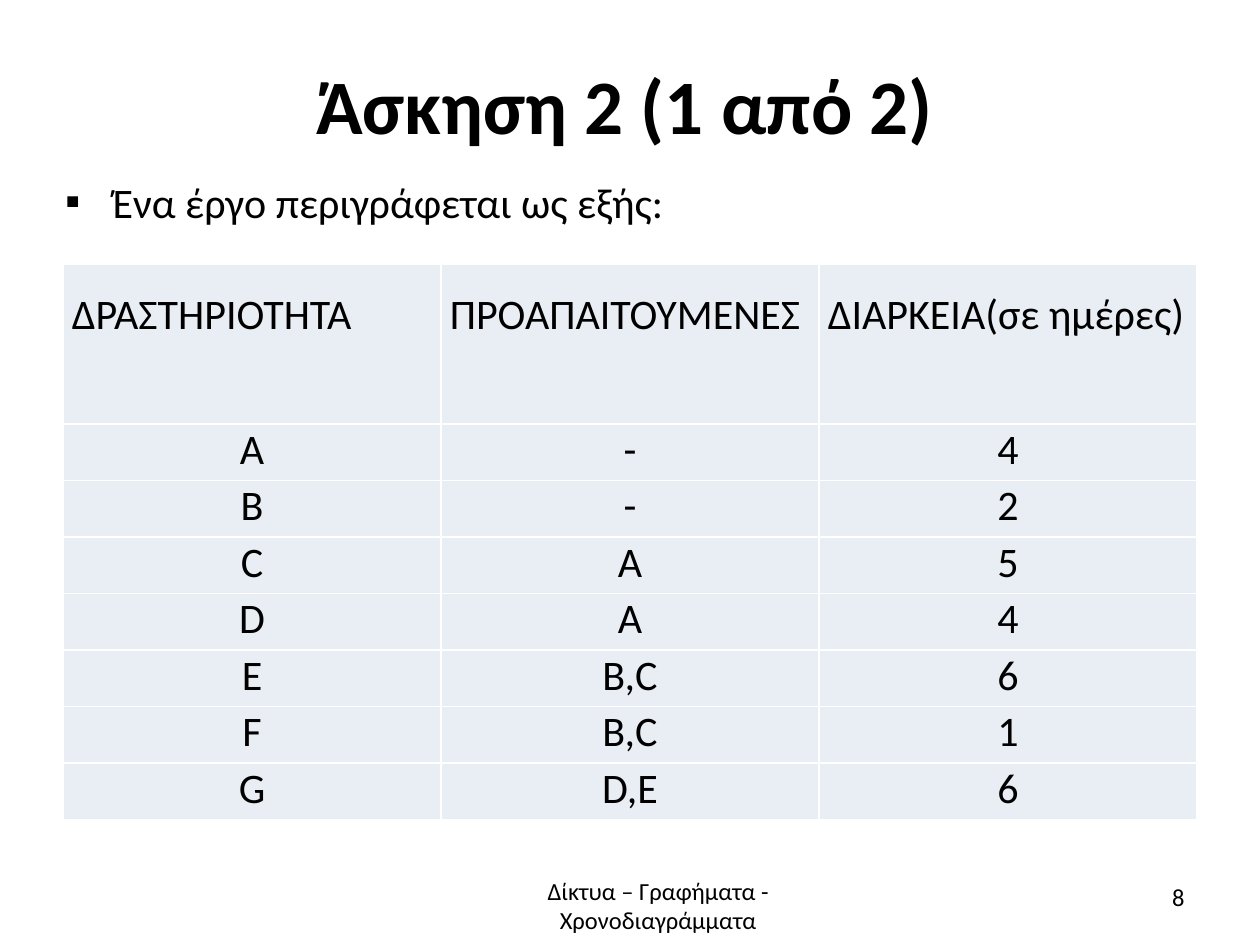
"""Builds the exercise slide with its table of project activities."""
import lxml.etree
import pptx
import pptx.dml.color
import pptx.enum.text
import pptx.oxml.ns
import pptx.util

Cm = pptx.util.Cm
Pt = pptx.util.Pt
ALIGN = pptx.enum.text.PP_ALIGN
COLORS = {"text": "000000", "cell": "E9EDF4", "border": "FFFFFF"}


def add_run(paragraph, text, size, align, bold=False):
    paragraph.alignment = align
    run = paragraph.add_run()
    run.text = text
    run.font.name = "Calibri"
    run.font.size = Pt(size)
    run.font.bold = bold
    run.font.color.rgb = pptx.dml.color.RGBColor.from_string(COLORS["text"])


def add_element(parent, tag, **attributes):
    return lxml.etree.SubElement(parent, pptx.oxml.ns.qn(tag), **attributes)


deck = pptx.Presentation()
deck.slide_width, deck.slide_height = Cm(25.4), Cm(19.05)
slide = deck.slides.add_slide(deck.slide_layouts[6])

title = slide.shapes.add_textbox(Cm(1.07), Cm(0.41), Cm(23.06), Cm(3.33)).text_frame
title.word_wrap = True
title.vertical_anchor = pptx.enum.text.MSO_ANCHOR.MIDDLE
title.margin_left = title.margin_right = title.margin_bottom = 0
title.margin_top = Cm(0.05)
add_run(title.paragraphs[0], "Άσκηση 2 (1 από 2)", 44, ALIGN.CENTER, bold=True)

intro = slide.shapes.add_textbox(Cm(1.07), Cm(2.92), Cm(23.06), Cm(1.63)).text_frame
intro.word_wrap = True
intro_line = intro.paragraphs[0]
intro_line.line_spacing = 1.5
intro_format = intro_line._p.get_or_add_pPr()
intro_format.set("marL", str(Cm(0.95)))
intro_format.set("indent", str(-Cm(0.95)))
add_element(intro_format, "a:buFont", typeface="Calibri")
add_element(intro_format, "a:buChar", char="▪")
add_run(intro_line, "Ένα έργο περιγράφεται ως εξής:", 24, ALIGN.LEFT)

activities = [
    ("ΔΡΑΣΤΗΡΙΟΤΗΤΑ", "ΠΡΟΑΠΑΙΤΟΥΜΕΝΕΣ", "ΔΙΑΡΚΕΙΑ(σε ημέρες)"),
    ("A", "-", "4"),
    ("B", "-", "2"),
    ("C", "A", "5"),
    ("D", "A", "4"),
    ("E", "B,C", "6"),
    ("F", "B,C", "1"),
    ("G", "D,E", "6"),
]
schedule = slide.shapes.add_table(
    len(activities), 3, Cm(1.27), Cm(5.33), Cm(22.86), Cm(11.2)).table
schedule.first_row = schedule.horz_banding = False
for column in schedule.columns:
    column.width = Cm(7.62)

for row_index, activity in enumerate(activities):
    is_header = row_index == 0
    schedule.rows[row_index].height = Cm(3.22 if is_header else 1.14)
    for column_index, value in enumerate(activity):
        cell = schedule.cell(row_index, column_index)
        cell.margin_left = cell.margin_right = Cm(0.18)
        cell.margin_top = cell.margin_bottom = 0
        for side in ("a:lnL", "a:lnR", "a:lnT", "a:lnB"):
            border = add_element(cell._tc.get_or_add_tcPr(), side, w=str(Pt(1)))
            border_fill = add_element(border, "a:solidFill")
            add_element(border_fill, "a:srgbClr", val=COLORS["border"])
        cell.fill.solid()
        cell.fill.fore_color.rgb = pptx.dml.color.RGBColor.from_string(COLORS["cell"])
        entry = cell.text_frame.paragraphs[0]
        if is_header:
            entry.line_spacing = 1.5
        add_run(entry, value, 24, ALIGN.JUSTIFY if is_header else ALIGN.CENTER)

footers = [
    ("Δίκτυα – Γραφήματα - Χρονοδιαγράμματα", 8.84, 17.53, 8.86, 1.4, ALIGN.CENTER),
    ("8", 18.21, 17.65, 5.92, 1.02, ALIGN.RIGHT),
]
for text, left, top, width, height, align in footers:
    footer = slide.shapes.add_textbox(Cm(left), Cm(top), Cm(width), Cm(height)).text_frame
    footer.word_wrap = True
    add_run(footer.paragraphs[0], text, 14, align)

deck.save("out.pptx")
